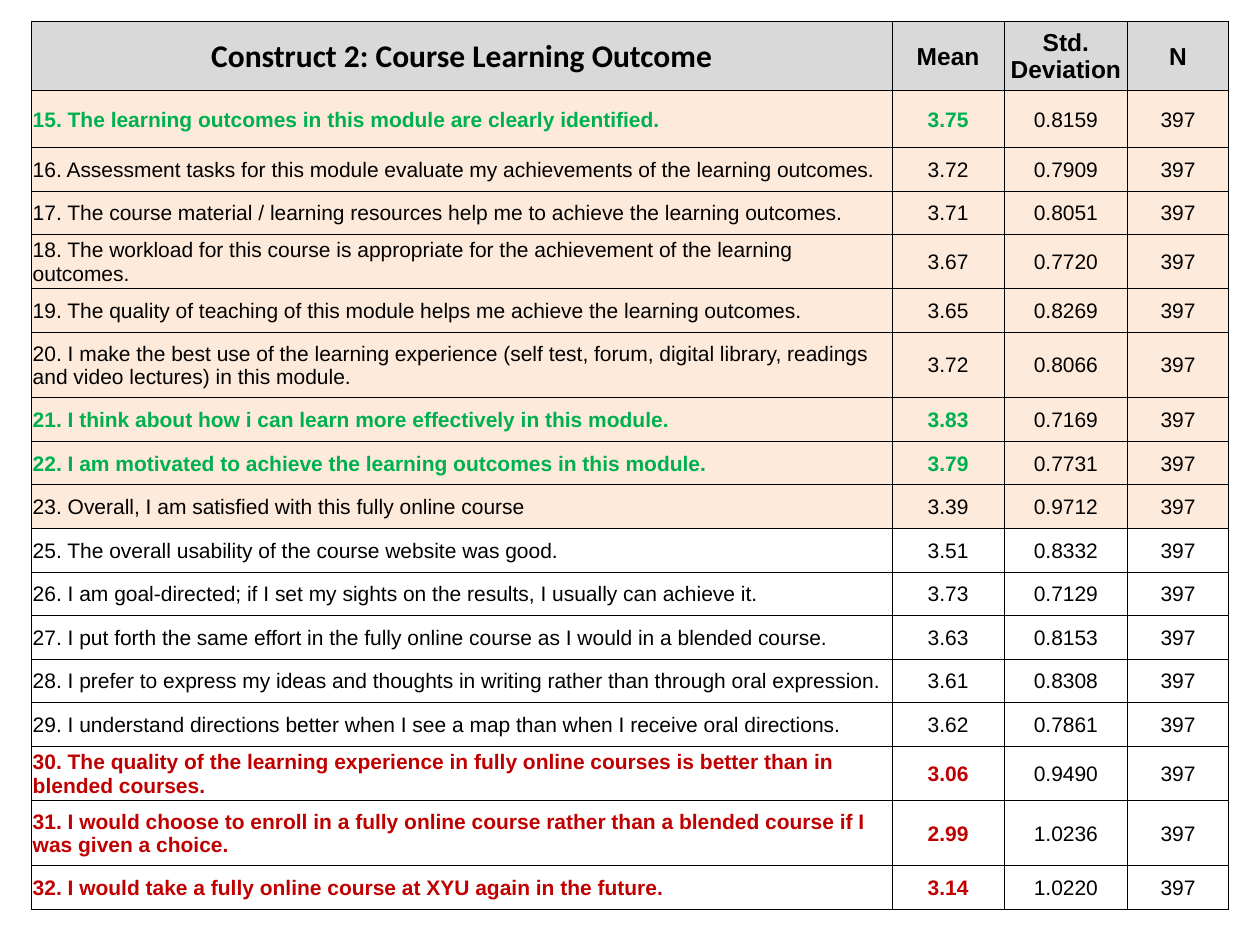
from lxml.etree import SubElement as Sub
from pptx import Presentation
from pptx.dml.color import RGBColor
from pptx.enum.text import MSO_ANCHOR as Anchor, PP_ALIGN as Align
from pptx.oxml.ns import qn
from pptx.util import Inches, Pt

BLACK, GREEN, RED = "000000", "00B050", "C00000"
GREY, PEACH = "D9D9D9", "FDEADA"
HEAD = ("Construct 2: Course Learning Outcome", "Mean", "Std. Deviation", "N")
COUNT = "397"
WIDTHS = (0.89, 0.98, 0.8)
TALL = {0: 0.55, 1: 0.45, 4: 0.43, 6: 0.52, 15: 0.43, 16: 0.52}
SHADED = 9
ITEMS = [
    ("15. The learning outcomes in this module are clearly identified.", "3.75", "0.8159", GREEN),
    ("16. Assessment tasks for this module evaluate my achievements of the learning outcomes.", "3.72", "0.7909", BLACK),
    ("17. The course material / learning resources help me to achieve the learning outcomes.", "3.71", "0.8051", BLACK),
    ("18. The workload for this course is appropriate for the achievement of the learning outcomes.", "3.67", "0.7720", BLACK),
    ("19. The quality of teaching of this module helps me achieve the learning outcomes.", "3.65", "0.8269", BLACK),
    ("20. I make the best use of the learning experience (self test, forum, digital library, readings "
     "and video lectures) in this module.", "3.72", "0.8066", BLACK),
    ("21. I think about how i can learn more effectively in this module.", "3.83", "0.7169", GREEN),
    ("22. I am motivated to achieve the learning outcomes in this module.", "3.79", "0.7731", GREEN),
    ("23. Overall, I am satisfied with this fully online course", "3.39", "0.9712", BLACK),
    ("25. The overall usability of the course website was good.", "3.51", "0.8332", BLACK),
    ("26. I am goal-directed; if I set my sights on the results, I usually can achieve it.", "3.73", "0.7129", BLACK),
    ("27. I put forth the same effort in the fully online course as I would in a blended course.", "3.63", "0.8153", BLACK),
    ("28. I prefer to express my ideas and thoughts in writing rather than through oral expression.", "3.61", "0.8308", BLACK),
    ("29. I understand directions better when I see a map than when I receive oral directions.", "3.62", "0.7861", BLACK),
    ("30. The quality of the learning experience in fully online courses is better than in blended courses.",
     "3.06", "0.9490", RED),
    ("31. I would choose to enroll in a fully online course rather than a blended course if I was given a choice.",
     "2.99", "1.0236", RED),
    ("32. I would take a fully online course at XYU again in the future.", "3.14", "1.0220", RED),
]


def rgb(code):
    """Turn a hex string into a colour."""
    return RGBColor.from_string(code)


def frame(cell):
    """Draw a thin black line on all four sides of a cell."""
    props = cell._tc.get_or_add_tcPr()
    for side in ("lnL", "lnR", "lnT", "lnB"):
        line = Sub(props, qn(f"a:{side}"), w=str(Pt(0.5)))
        Sub(Sub(line, qn("a:solidFill")), qn("a:srgbClr"), val=BLACK)


def write(cell, text, size, color=BLACK, bold=False, font="Arial", align=Align.CENTER, fill=None):
    """Put styled text in a bordered cell."""
    frame(cell)
    if fill:
        cell.fill.solid()
        cell.fill.fore_color.rgb = rgb(fill)
    else:
        cell.fill.background()
    cell.margin_left = cell.margin_right = cell.margin_top = Inches(0.01)
    cell.margin_bottom = 0
    cell.vertical_anchor = Anchor.MIDDLE
    cell.text = text
    para = cell.text_frame.paragraphs[0]
    para.alignment = align
    para.font.name, para.font.size, para.font.bold = font, Pt(size), bold
    para.font.color.rgb = rgb(color)


def survey(slide, left, top, width, height):
    """Build the table of survey results within the given box."""
    total = len(ITEMS) + 1
    box = [Inches(n) for n in (left, top, width, height)]
    table = slide.shapes.add_table(total, len(HEAD), *box).table
    table.first_row = table.horz_banding = False
    for col, size in zip(table.columns, (width - sum(WIDTHS), *WIDTHS)):
        col.width = Inches(size)
    plain = (height - sum(TALL.values())) / (total - len(TALL))
    for i, row in enumerate(table.rows):
        row.height = Inches(TALL.get(i, plain))
    for j, text in enumerate(HEAD):
        size, font = (14, "Arial") if j else (18, "Calibri")
        write(table.cell(0, j), text, size, bold=True, font=font, fill=GREY)
    for i, (label, mean, dev, color) in enumerate(ITEMS, 1):
        fill = PEACH if i <= SHADED else None
        for j, text in enumerate((label, mean, dev, COUNT)):
            tint = color if j < 2 else BLACK
            align = Align.CENTER if j else Align.LEFT
            write(table.cell(i, j), text, 12, tint, tint != BLACK, align=align, fill=fill)


def main():
    """Make the deck and save it."""
    deck = Presentation()
    deck.slide_width, deck.slide_height = Inches(10), Inches(7.5)
    slide = deck.slides.add_slide(deck.slide_layouts[6])
    survey(slide, 0.25, 0.17, 9.5, 7.05)
    deck.save("out.pptx")


if __name__ == "__main__":
    main()
